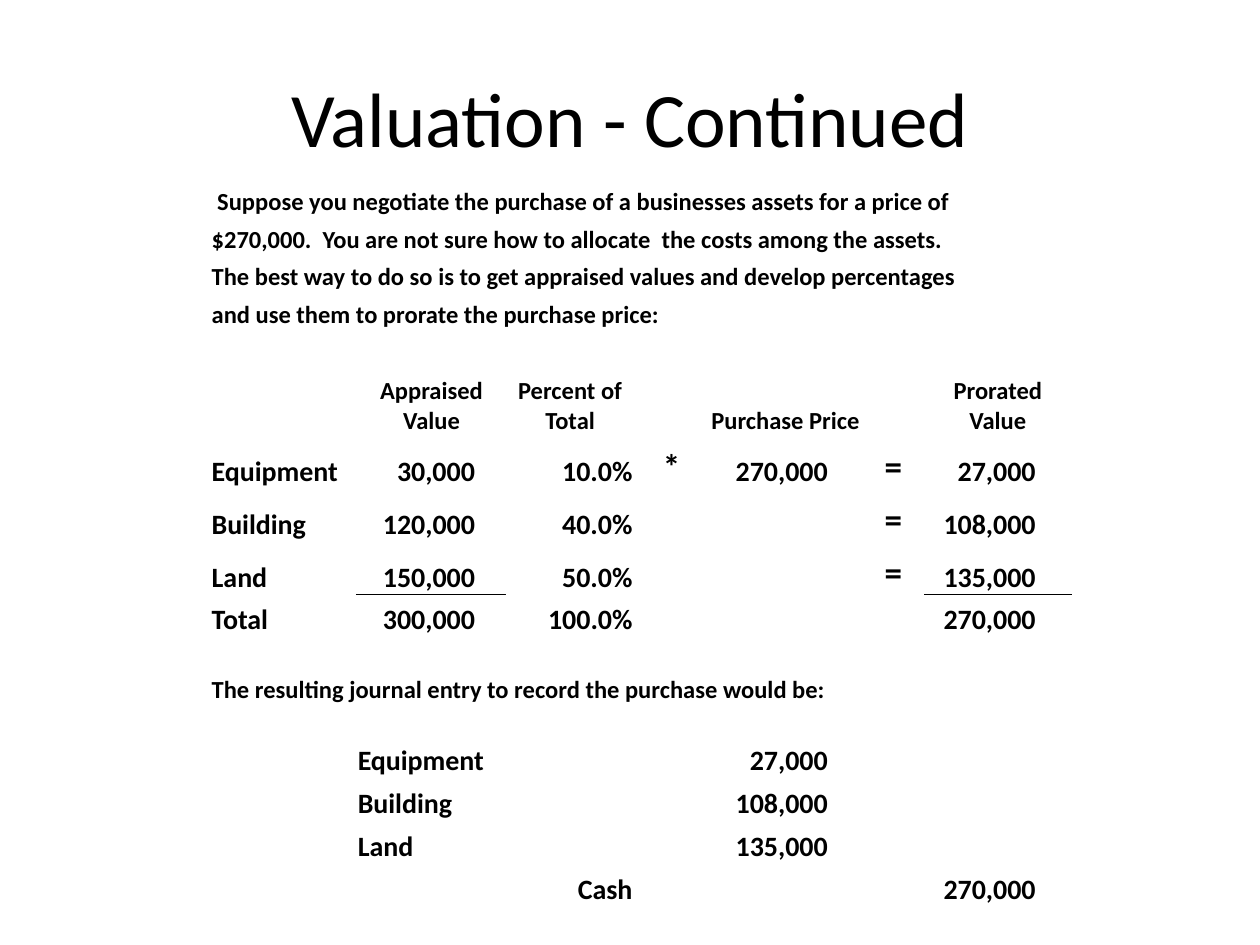
from dataclasses import dataclass
from lxml.etree import SubElement
from pptx import Presentation
from pptx.dml.color import RGBColor
from pptx.enum.text import MSO_ANCHOR, PP_ALIGN
from pptx.oxml import parse_xml
from pptx.oxml.ns import nsdecls, qn
from pptx.util import Inches, Pt


@dataclass(frozen=True)
class Theme:
    font: str = "Calibri"
    ink: str = "000000"
    title: int = 44
    prose: int = 14
    figure: int = 16
    sign: int = 20
    spacer: int = 12
    rule: float = 0.5


T = Theme()
LEFT, CENTER, RIGHT = PP_ALIGN.LEFT, PP_ALIGN.CENTER, PP_ALIGN.RIGHT
COLS = [1.16, 1.19, 1.01, 0.6, 1.21, 0.5, 1.16]
ROWS = [0.3] * 4 + [0.24, 0.6] + [0.42] * 3 + [0.34, 0.24, 0.3, 0.24] + [0.34] * 4
NAME, APPRAISED, PERCENT, TIMES, PRICE, EQUALS, PRORATED = range(7)
AMOUNT_INSET = {APPRAISED: 0.25, PRICE: 0.27, PRORATED: 0.28}

INTRO = [
    (" Suppose you negotiate the purchase of a businesses assets for a price of", 7),
    ("$270,000.  You are not sure how to allocate  the costs among the assets.", 7),
    ("The best way to do so is to get appraised values and develop percentages", 7),
    ("and use them to prorate the purchase price:", 5),
]
HEADINGS = {APPRAISED: "Appraised Value", PERCENT: "Percent of Total",
            PRICE: "Purchase Price", PRORATED: "Prorated Value"}
ALLOCATION = [
    ("Equipment", "30,000", "10.0%", "*", "270,000", "=", "27,000"),
    ("Building", "120,000", "40.0%", "", "", "=", "108,000"),
    ("Land", "150,000", "50.0%", "", "", "=", "135,000"),
    ("Total", "300,000", "100.0%", "", "", "", "270,000"),
]
JOURNAL = [
    {APPRAISED: "Equipment", PRICE: "27,000"},
    {APPRAISED: "Building", PRICE: "108,000"},
    {APPRAISED: "Land", PRICE: "135,000"},
    {PERCENT: "Cash", PRORATED: "270,000"},
]


def write(tf, text, size=T.prose, bold=True, align=LEFT, anchor=MSO_ANCHOR.BOTTOM):
    tf.vertical_anchor = anchor
    p = tf.paragraphs[0]
    p.alignment = align
    r = p.add_run()
    r.text = text
    r.font.name = T.font
    r.font.size = Pt(size)
    r.font.bold = bold
    r.font.color.rgb = RGBColor.from_string(T.ink)


def fill_cell(cell, text, inset=0.01, **fmt):
    cell.margin_right = Inches(inset)
    cell.vertical_anchor = MSO_ANCHOR.BOTTOM
    write(cell.text_frame, text, **fmt)


def fill_figure(cell, col, text):
    if col in AMOUNT_INSET and text[0].isdigit():
        fill_cell(cell, text, inset=AMOUNT_INSET[col], size=T.figure, align=RIGHT)
    elif col in (TIMES, EQUALS):
        fill_cell(cell, text, size=T.sign, align=CENTER)
    else:
        fill_cell(cell, text, size=T.figure, align=RIGHT if col == PERCENT else LEFT)


def fill_span(table, row, text, width):
    cell = table.cell(row, 0)
    cell.merge(table.cell(row, width - 1))
    fill_cell(cell, text)


def rule_cell(cell, side):
    ln = parse_xml(
        f'<a:{side} {nsdecls("a")} w="{Pt(T.rule)}"><a:solidFill>'
        f'<a:srgbClr val="{T.ink}"/></a:solidFill></a:{side}>')
    cell._tc.get_or_add_tcPr().insert(0, ln)


def add_grid(s):
    table = s.shapes.add_table(
        len(ROWS), len(COLS), Inches(1.67), Inches(1.42),
        Inches(sum(COLS)), Inches(sum(ROWS))).table
    table.first_row = table.horz_banding = False
    for column, width in zip(table.columns, COLS):
        column.width = Inches(width)
    for row, height in zip(table.rows, ROWS):
        row.height = Inches(height)
    for cell in table.iter_cells():
        cell.fill.background()
        cell.margin_left = cell.margin_right = cell.margin_top = Inches(0.01)
        cell.margin_bottom = 0
    return table


def shrink_empty_cells(table):
    for cell in table.iter_cells():
        if not cell.text_frame.text:
            p = cell.text_frame.paragraphs[0]
            SubElement(p._p, qn("a:endParaRPr"), sz=str(T.spacer * 100))


def add_title(s, text):
    title = s.shapes.title
    title.left, title.top = Inches(0.5), Inches(0.3)
    title.width, title.height = Inches(9), Inches(1.25)
    write(title.text_frame, text, size=T.title, bold=False,
          align=CENTER, anchor=MSO_ANCHOR.MIDDLE)


def add_valuation(s):
    table = add_grid(s)
    for row, (text, width) in enumerate(INTRO):
        fill_span(table, row, text, width)
    for col, text in HEADINGS.items():
        fill_cell(table.cell(5, col), text, align=CENTER)
    figures = [dict(enumerate(line)) for line in ALLOCATION]
    for first, lines in ((6, figures), (13, JOURNAL)):
        for row, line in enumerate(lines, first):
            for col, text in line.items():
                if text:
                    fill_figure(table.cell(row, col), col, text)
    fill_span(table, 11, "The resulting journal entry to record the purchase would be:", 6)
    for col in (APPRAISED, PRORATED):
        rule_cell(table.cell(8, col), "lnB")
        rule_cell(table.cell(9, col), "lnT")
    shrink_empty_cells(table)


def main():
    prs = Presentation()
    prs.slide_width, prs.slide_height = Inches(10), Inches(7.5)
    s = prs.slides.add_slide(prs.slide_layouts[5])
    add_title(s, "Valuation - Continued")
    add_valuation(s)
    prs.save("out.pptx")


if __name__ == "__main__":
    main()
